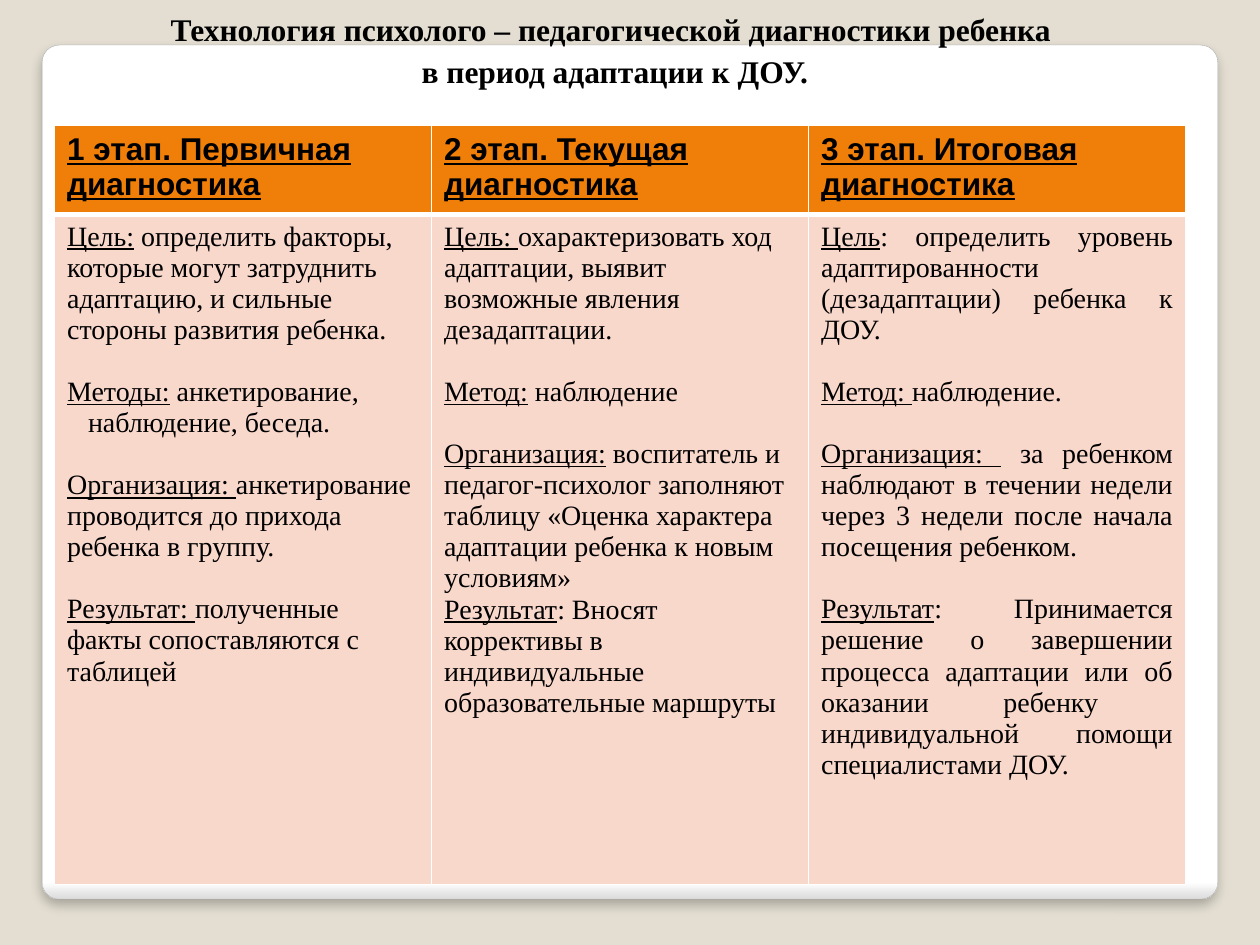
from dataclasses import dataclass

from lxml import etree
from pptx import Presentation
from pptx.dml.color import RGBColor
from pptx.enum.shapes import MSO_SHAPE
from pptx.enum.text import MSO_ANCHOR, MSO_AUTO_SIZE, PP_ALIGN
from pptx.oxml.ns import qn
from pptx.util import Cm, Pt

ROUNDED = MSO_SHAPE.ROUNDED_RECTANGLE
TOP = MSO_ANCHOR.TOP
NO_AUTO_SIZE = MSO_AUTO_SIZE.NONE
LEFT, CENTER, JUSTIFY = PP_ALIGN.LEFT, PP_ALIGN.CENTER, PP_ALIGN.JUSTIFY
TITLE_ONLY = 5


@dataclass(frozen=True)
class Theme:
    background: str = "E3DED1"
    white: str = "FFFFFF"
    card_edge: str = "DADADA"
    card_line: str = "A4A4A4"
    shadow: str = "000000"
    text: str = "000000"
    header: str = "F07F09"
    body: str = "F9D8CC"
    serif: str = "Times New Roman"
    sans: str = "Arial"
    heading_size: float = 18
    body_size: float = 16
    section_gap: float = 17.7


theme = Theme()

TITLE = (
    "Технология психолого – педагогической диагностики ребенка \n"
    "в период адаптации к ДОУ."
)

# Each stage: heading, alignment, then (label, text, gap before, hanging indent in cm)
STAGES = [
    ("1 этап. Первичная диагностика", LEFT, [
        ("Цель:", " определить факторы, которые могут затруднить адаптацию, "
         "и сильные стороны развития ребенка.", False, 0),
        ("Методы:", " анкетирование, наблюдение, беседа.", True, 0.42),
        ("Организация: ", "анкетирование проводится до прихода ребенка в группу.",
         True, 0),
        ("Результат: ", "полученные факты сопоставляются с таблицей", True, 0),
    ]),
    ("2 этап. Текущая диагностика", LEFT, [
        ("Цель: ", "охарактеризовать ход адаптации, выявит возможные явления "
         "дезадаптации.", False, 0),
        ("Метод:", " наблюдение", True, 0),
        ("Организация:", " воспитатель и педагог-психолог заполняют таблицу "
         "«Оценка характера адаптации ребенка к новым условиям»", True, 0),
        ("Результат", ": Вносят коррективы в индивидуальные образовательные "
         "маршруты", False, 0),
    ]),
    ("3 этап. Итоговая диагностика", JUSTIFY, [
        ("Цель", ": определить уровень адаптированности (дезадаптации) ребенка "
         "к ДОУ.", False, 0),
        ("Метод: ", "наблюдение.", True, 0),
        ("Организация: ", " за ребенком наблюдают в течении недели через 3 недели "
         "после начала посещения ребенком.", True, 0),
        ("Результат", ": Принимается решение о завершении процесса адаптации "
         "или об оказании ребенку  индивидуальной помощи специалистами ДОУ.",
         True, 0),
    ]),
]


def format_run(run, font_name, size, bold=False, underline=False):
    font = run.font
    font.name, font.size = font_name, Pt(size)
    font.bold, font.underline = bold, underline
    font.color.rgb = RGBColor.from_string(theme.text)


def style_cell(cell, color, top_width, bottom_width):
    """Fill the cell and give it white borders, 1 pt wide at the sides."""
    cell.fill.solid()
    cell.fill.fore_color.rgb = RGBColor.from_string(color)
    properties = cell._tc.get_or_add_tcPr()
    widths = {"lnL": 1, "lnR": 1, "lnT": top_width, "lnB": bottom_width}
    for position, (side, width) in enumerate(widths.items()):
        border = etree.Element(qn(f"a:{side}"), w=str(Pt(width)))
        fill = etree.SubElement(border, qn("a:solidFill"))
        etree.SubElement(fill, qn("a:srgbClr"), val=theme.white)
        properties.insert(position, border)


presentation = Presentation()
presentation.slide_width, presentation.slide_height = Cm(25.4), Cm(19.05)
slide = presentation.slides.add_slide(presentation.slide_layouts[TITLE_ONLY])
slide.background.fill.solid()
slide.background.fill.fore_color.rgb = RGBColor.from_string(theme.background)

# White card behind everything
card = slide.shapes.add_shape(ROUNDED, Cm(0.85), Cm(0.91), Cm(23.7), Cm(17.22))
card.adjustments[0] = 0.02
card.fill.gradient()
card.fill.gradient_angle = 270
stops = zip(card.fill.gradient_stops, (0.98, 1), (theme.white, theme.card_edge))
for stop, position, color in stops:
    stop.position = position
    stop.color.rgb = RGBColor.from_string(color)
card.line.color.rgb = RGBColor.from_string(theme.card_line)
card.line.width = Pt(0.16)
card.shadow.inherit = False
effects = card.element.spPr.find(qn("a:effectLst"))
shadow = etree.SubElement(
    effects, qn("a:outerShdw"), blurRad=str(Pt(6)), dist=str(Pt(4)),
    dir="5400000", algn="t", rotWithShape="0")
shadow_color = etree.SubElement(shadow, qn("a:srgbClr"), val=theme.shadow)
etree.SubElement(shadow_color, qn("a:alpha"), val="25000")

# Title, in front of the card
title = slide.shapes.title
title.left, title.top, title.width, title.height = Cm(3.1), Cm(0), Cm(18.59), Cm(1.8)
title.element.addprevious(card.element)
frame = title.text_frame
frame.text = TITLE
frame.word_wrap = False
frame.auto_size = NO_AUTO_SIZE
frame.vertical_anchor = TOP
for paragraph in frame.paragraphs:
    paragraph.alignment = CENTER
    paragraph.line_spacing = 1.1
    format_run(paragraph.runs[0], theme.serif, theme.heading_size, bold=True)

# Table: one column per stage
table = slide.shapes.add_table(
    2, len(STAGES), Cm(1.1), Cm(2.53), Cm(22.8), Cm(15.3)).table
table.rows[0].height, table.rows[1].height = Cm(1.8), Cm(13.5)
for column, (heading, alignment, sections) in enumerate(STAGES):
    header_cell, body_cell = table.cell(0, column), table.cell(1, column)
    style_cell(header_cell, theme.header, 1, 3)
    style_cell(body_cell, theme.body, 3, 1)

    header_cell.text_frame.text = heading
    format_run(header_cell.text_frame.paragraphs[0].runs[0], theme.sans,
               theme.heading_size, bold=True, underline=True)

    frame = body_cell.text_frame
    for index, (label, text, gap_before, indent) in enumerate(sections):
        paragraph = frame.add_paragraph() if index else frame.paragraphs[0]
        paragraph.alignment = alignment
        if gap_before:
            paragraph.space_before = Pt(theme.section_gap)
        if indent:
            paragraph_properties = paragraph._p.get_or_add_pPr()
            paragraph_properties.set("marL", str(Cm(indent)))
            paragraph_properties.set("indent", str(-Cm(indent)))
        for words, underline in ((label, True), (text, False)):
            run = paragraph.add_run()
            run.text = words
            format_run(run, theme.serif, theme.body_size, underline=underline)

presentation.save("out.pptx")
